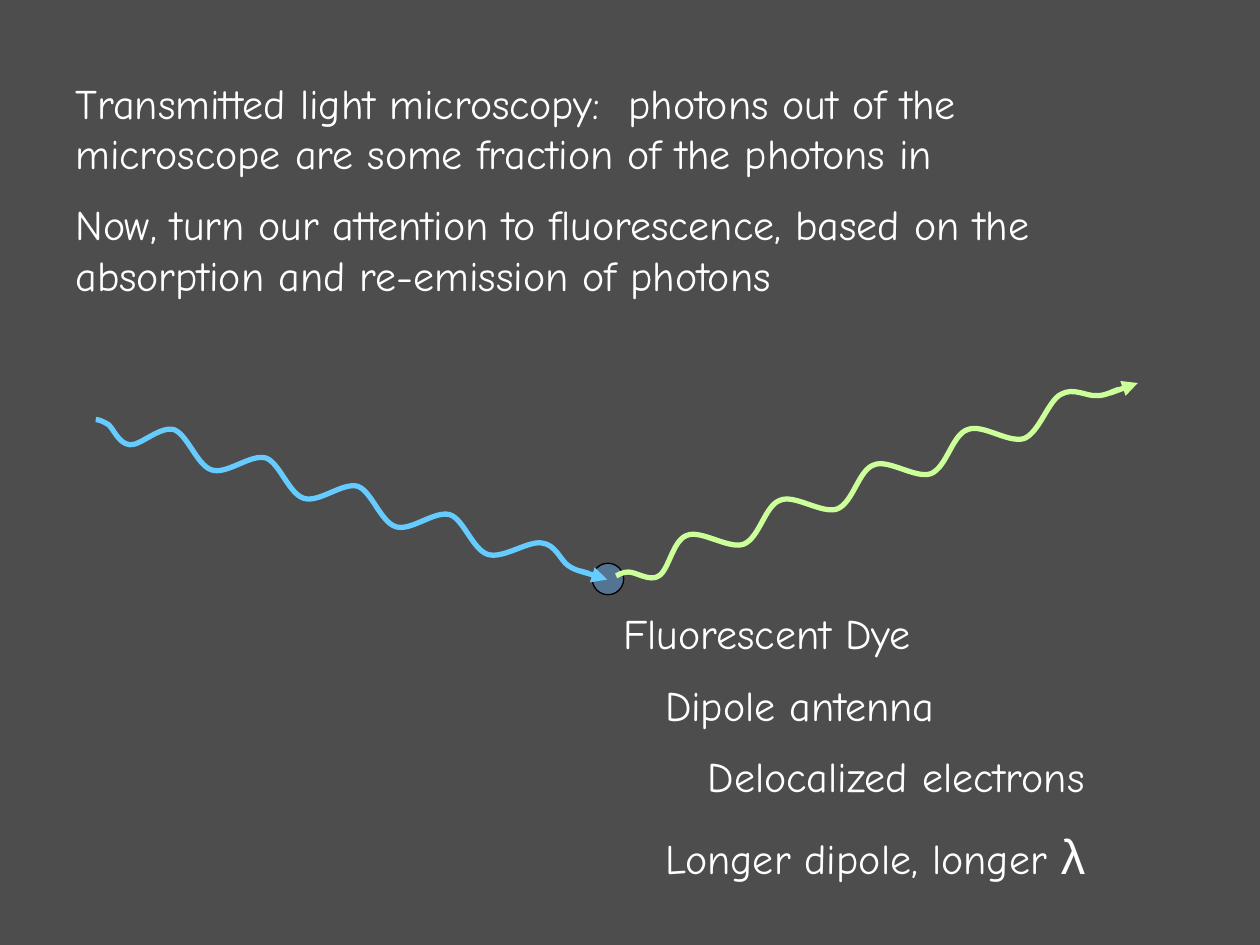
import math

from lxml import etree
from pptx import Presentation, util as u
from pptx.dml.color import RGBColor
from pptx.enum import shapes, text
from pptx.oxml.ns import qn

PX = 9144  # 100 px to the inch
COLORS = {"background": "4D4D4D", "text": "FFFFFF", "dye": "5B9BD5",
          "outline": "000000", "absorbed": "66CCFF", "emitted": "CCFF99"}
COLORS = {name: RGBColor.from_string(value) for name, value in COLORS.items()}


def turn(point, degrees):
    """Turn a point clockwise about the slide's top left corner."""
    x, y = point
    cosine, sine = math.cos(math.radians(degrees)), math.sin(math.radians(degrees))
    return x * cosine - y * sine, x * sine + y * cosine


def add_text(slide, box, paragraphs):
    """Add a text box; each paragraph is an indent in px, its space before and its text."""
    shape = slide.shapes.add_textbox(*[v * PX for v in box])
    frame = shape.text_frame
    frame.word_wrap = True
    frame.auto_size = text.MSO_AUTO_SIZE.SHAPE_TO_FIT_TEXT
    frame.vertical_anchor = text.MSO_ANCHOR.MIDDLE
    for i, (indent, space, words) in enumerate(paragraphs):
        paragraph = frame.paragraphs[0] if i == 0 else frame.add_paragraph()
        paragraph.add_run().text = words
        paragraph.space_before = u.Pt(space)
        paragraph.font.name = "Comic Neue"
        paragraph.font.size = u.Pt(24)
        paragraph.font.color.rgb = COLORS["text"]
        if indent:
            paragraph._p.get_or_add_pPr().set("marL", str(indent * PX))
    return frame


presentation = Presentation()
presentation.slide_width, presentation.slide_height = 1000 * PX, 750 * PX
slide = presentation.slides.add_slide(presentation.slide_layouts[6])
slide.background.fill.solid()
slide.background.fill.fore_color.rgb = COLORS["background"]

# Dye molecule, half transparent
dye = slide.shapes.add_shape(shapes.MSO_SHAPE.OVAL, 470 * PX, 447 * PX, 25 * PX, 25 * PX)
dye.shadow.inherit = False
dye.fill.solid()
dye.fill.fore_color.rgb = COLORS["dye"]
dye.line.color.rgb = COLORS["outline"]
dye.line.width = u.Pt(0.75)
dye_color = dye._element.spPr.find(qn("a:solidFill"))[0]
etree.SubElement(dye_color, qn("a:alpha"), val="50000")

# Introduction
add_text(slide, (50, 40, 825, 219), [
    (0, 12, "Transmitted light microscopy:  photons out of the microscope are some fraction of the photons in"),
    (0, 12, "Now, turn our attention to fluorescence, based on the absorption and re-emission of photons"),
])

# Light waves: first bend, one cycle with its repeats, last bend, arrow
waves = [
    {"color": "absorbed", "rotation": 17,
     "start": [(76, 333), (78, 333), (81, 334), (86, 337), (90, 340), (94, 352), (103, 353),
               (111, 354), (127, 338), (138, 341)],
     "cycle": [(11, 4), (18, 28), (30, 32), (42, 36), (61, 19), (73, 22.5)], "repeats": 3,
     "end": [(368, 412), (375, 436), (387, 440), (399, 444), (419, 429), (430, 431),
             (441, 432), (445, 445), (451, 449), (457, 453), (463, 454), (467, 455)],
     "arrow": (460, 453, 482, 460)},
    {"color": "emitted", "rotation": 339.3,
     "start": [(489, 457), (490, 457), (493, 454), (499, 454), (505, 454), (516, 462), (523, 457),
               (531, 452), (534, 429), (545, 425)],
     "cycle": [(11, -5), (33, 11), (45, 7), (58, 2), (62, -24), (74.3, -28)], "repeats": 3,
     "end": [(780, 336), (800, 352), (813, 348), (825, 343), (832, 318), (842, 313),
             (852, 307), (863, 315), (871, 314), (878, 314), (884, 310), (888, 309)],
     "arrow": (881, 312, 903, 304)},
]
for wave in waves:
    anchors = list(wave["start"])
    for _ in range(wave["repeats"]):
        x, y = anchors[-1]
        anchors += [(x + dx, y + dy) for dx, dy in wave["cycle"]]
    level = [turn(point, -wave["rotation"]) for point in anchors + wave["end"]]
    level = [(round(x * PX), round(y * PX)) for x, y in level]

    # Draw the wave level, with each three points as one Bezier curve
    group = slide.shapes.add_group_shape()
    builder = group.shapes.build_freeform(*level[0])
    builder.add_line_segments(level[1:], close=False)
    curve = builder.convert_to_shape()
    outline = curve._element.spPr.find(".//" + qn("a:path"))
    segments = outline.findall(qn("a:lnTo"))
    for i in range(0, len(segments), 3):
        bezier = etree.SubElement(outline, qn("a:cubicBezTo"))
        for segment in segments[i:i + 3]:
            bezier.append(segment[0])
            outline.remove(segment)

    # Turn it into its slanted place
    center = turn((curve.left + curve.width / 2, curve.top + curve.height / 2), wave["rotation"])
    curve.left = round(center[0] - curve.width / 2)
    curve.top = round(center[1] - curve.height / 2)
    curve.rotation = wave["rotation"]
    curve.shadow.inherit = False
    curve.fill.background()

    arrow = group.shapes.add_connector(shapes.MSO_CONNECTOR.STRAIGHT, *[v * PX for v in wave["arrow"]])
    for shape in (curve, arrow):
        shape.line.color.rgb = COLORS[wave["color"]]
        shape.line.width = u.Pt(3)
    etree.SubElement(arrow.line._get_or_add_ln(), qn("a:tailEnd"), type="triangle")
    etree.SubElement(arrow._element.spPr, qn("a:effectLst"))

# Dye properties
properties = add_text(slide, (485, 459, 474, 266), [
    (0, 12, "Fluorescent Dye"),
    (33, 12, "Dipole antenna"),
    (67, 12, "Delocalized electrons"),
    (33, 14, "Longer dipole, longer "),
])
symbol = properties.paragraphs[-1].add_run()
symbol.text = "λ"
symbol.font.name = "Arial"
symbol.font.size = u.Pt(28)

presentation.save("out.pptx")
